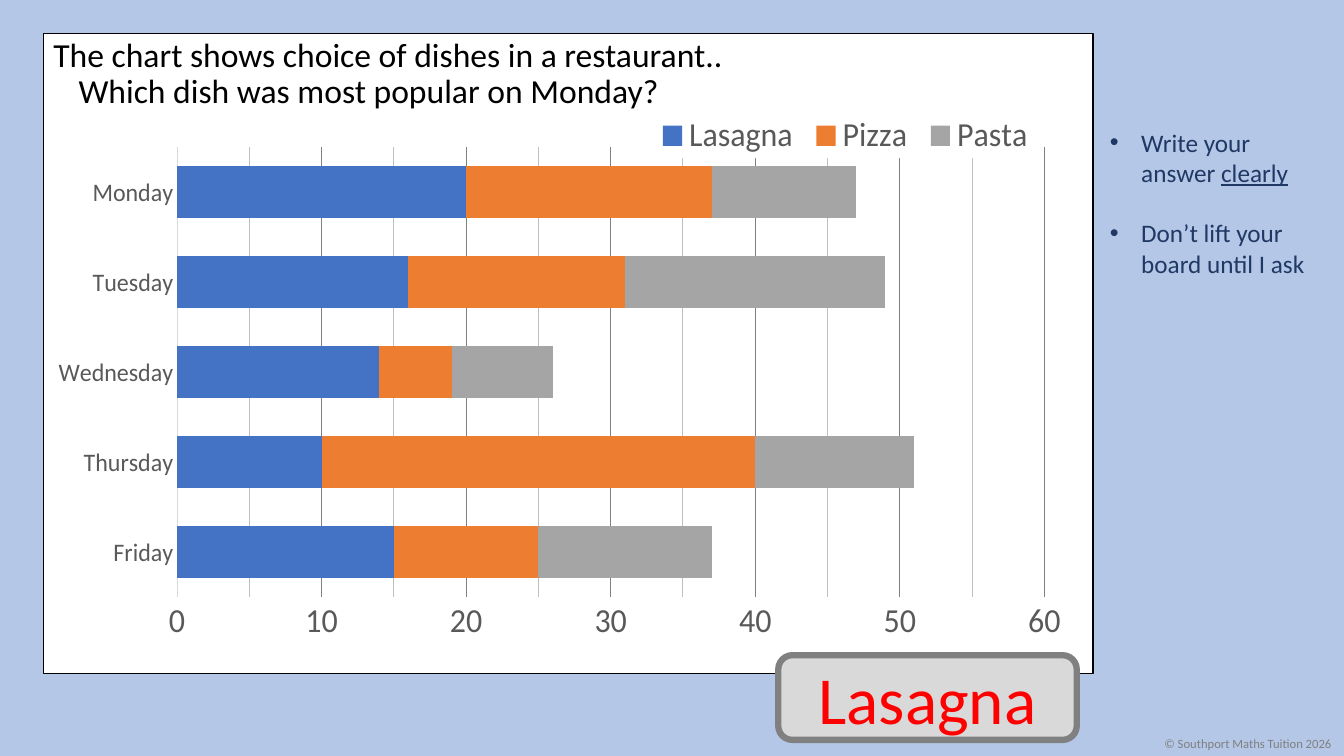
from lxml import etree
from pptx import Presentation, util as u
from pptx.chart.data import CategoryChartData
from pptx.dml.color import RGBColor
from pptx.enum import chart as ch, shapes, text
from pptx.oxml import parse_xml
from pptx.oxml.ns import nsdecls, qn

FONT = "Calibri"
DAYS = ["Friday", "Thursday", "Wednesday", "Tuesday", "Monday"]
DISHES = [
    ("Lasagna", "4472C4", (15, 10, 14, 16, 20)),
    ("Pizza", "ED7D31", (10, 30, 5, 15, 17)),
    ("Pasta", "A5A5A5", (12, 11, 7, 18, 10)),
]


def tint(hue):
    return RGBColor.from_string(hue)


def part(box, left, top, width, height):
    x, y, w, h = box
    return (int(x + w * left / 100), int(y + h * top / 100),
            int(w * width / 100), int(h * height / 100))


def style(font, size, hue):
    font.name = FONT
    font.size = u.Pt(size)
    font.color.rgb = tint(hue)


def rule(line, hue, width):
    line.color.rgb = tint(hue)
    line.width = u.Pt(width)


def write(para, words, size, hue, under=None):
    run = para.add_run()
    run.text = words
    style(run.font, size, hue)
    run.font.underline = under


def hang(para, inches, mark=None):
    props = para._p.get_or_add_pPr()
    props.set("marL", str(u.Inches(inches)))
    props.set("indent", str(-u.Inches(inches)))
    if mark:
        face = etree.SubElement(props, qn("a:buFont"))
        face.set("typeface", "Arial")
        etree.SubElement(props, qn("a:buChar")).set("char", mark)


def panel(slide, box, kind, fill, edge, width):
    shape = slide.shapes.add_shape(kind, *box)
    shape.shadow.inherit = False
    shape.fill.solid()
    shape.fill.fore_color.rgb = tint(fill)
    rule(shape.line, edge, width)
    return shape


def label(slide, box, wrap=True):
    frame = slide.shapes.add_textbox(*box).text_frame
    frame.word_wrap = wrap
    return frame


def layout(left, top, width, height, inner=False):
    target = '<c:layoutTarget val="inner"/>' if inner else ""
    sides = zip("xywh", (left, top, width, height))
    sizes = "".join(f'<c:{key} val="{val / 100:.3f}"/>' for key, val in sides)
    return parse_xml(
        f'<c:layout {nsdecls("c")}><c:manualLayout>{target}'
        '<c:xMode val="edge"/><c:yMode val="edge"/>'
        f'{sizes}</c:manualLayout></c:layout>')


def legend(chart):
    chart.has_legend = True
    key = chart.legend
    key.position = ch.XL_LEGEND_POSITION.BOTTOM
    key.include_in_layout = True
    style(key.font, 24, "595959")
    root = key._element
    root.find(qn("c:legendPos")).addnext(layout(57, 0.8, 41, 7.8))
    root.find(qn("c:txPr")).addprevious(parse_xml(
        f'<c:spPr {nsdecls("c", "a")}><a:solidFill>'
        '<a:srgbClr val="FFFFFF"/></a:solidFill></c:spPr>'))


def axes(chart):
    days, scale = chart.category_axis, chart.value_axis
    for axis, size in ((days, 18), (scale, 24)):
        axis.major_tick_mark = axis.minor_tick_mark = ch.XL_TICK_MARK.NONE
        style(axis.tick_labels.font, size, "595959")
    rule(days.format.line, "D9D9D9", 0.75)
    scale.format.line.fill.background()
    scale.minimum_scale, scale.maximum_scale = 0, 60
    scale.major_unit, scale.minor_unit = 10, 5
    scale.has_major_gridlines = scale.has_minor_gridlines = True
    rule(scale.major_gridlines.format.line, "808080", 0.75)
    minor = scale._element.find(qn("c:minorGridlines"))
    minor.append(parse_xml(
        f'<c:spPr {nsdecls("c", "a")}><a:ln w="{u.Pt(0.75)}"><a:solidFill>'
        '<a:srgbClr val="BFBFBF"/></a:solidFill></a:ln></c:spPr>'))


def graph(slide, box):
    data = CategoryChartData()
    data.categories = DAYS
    for name, _, vals in DISHES:
        data.add_series(name, vals)
    chart = slide.shapes.add_chart(
        ch.XL_CHART_TYPE.BAR_STACKED, *box, data).chart
    chart.has_title = False
    style(chart.font, 10, "000000")
    plot = chart.plots[0]
    plot.gap_width, plot.overlap = 75, 100
    plot.vary_by_categories = False
    for bar, (_, hue, _) in zip(plot.series, DISHES):
        bar.format.fill.solid()
        bar.format.fill.fore_color.rgb = tint(hue)
    axes(chart)
    legend(chart)
    area = chart._chartSpace.chart.plotArea
    for old in area.findall(qn("c:layout")):
        area.remove(old)
    area.insert(0, layout(7.4, 6.7, 91, 78.6, True))


def card(slide, box):
    panel(slide, box, shapes.MSO_SHAPE.RECTANGLE, "FFFFFF", "000000", 1)
    para = label(slide, box).paragraphs[0]
    hang(para, 0.25)
    para.line_spacing = 0.9
    write(para, "The chart shows choice of dishes in a restaurant..", 24, "000000")
    para.add_line_break()
    write(para, "Which dish was most popular on Monday?", 24, "000000")
    graph(slide, part(box, 1.44, 11.81, 95.49, 89.45))


def hints(slide, box):
    frame = label(slide, box)
    first, last = frame.paragraphs[0], frame.add_paragraph()
    last.space_before = u.Pt(21.6)
    for para in (first, last):
        hang(para, 0.31, "•")
    write(first, "Write your answer ", 18, "203864")
    write(first, "clearly", 18, "203864", True)
    write(last, "Don’t lift your board until I ask", 18, "203864")


def answer(slide, box):
    shape = panel(slide, box, shapes.MSO_SHAPE.ROUNDED_RECTANGLE,
                  "D9D9D9", "808080", 4.5)
    frame = shape.text_frame
    frame.vertical_anchor = text.MSO_ANCHOR.MIDDLE
    para = frame.paragraphs[0]
    para.alignment = text.PP_ALIGN.CENTER
    write(para, "Lasagna", 48, "FF0000")


def footer(slide, box):
    para = label(slide, box, False).paragraphs[0]
    write(para, "© Southport Maths Tuition 2026", 9, "808080")


def main():
    deck = Presentation()
    deck.slide_width, deck.slide_height = u.Inches(13.33), u.Inches(7.5)
    slide = deck.slides.add_slide(deck.slide_layouts[6])
    back = slide.background.fill
    back.solid()
    back.fore_color.rgb = tint("B4C7E7")
    page = (0, 0, deck.slide_width, deck.slide_height)
    card(slide, part(page, 3.23, 4.4, 78.09, 84.67))
    hints(slide, part(page, 81.85, 16.13, 17.4, 21.6))
    footer(slide, part(page, 85.9, 96.67, 14.1, 3.33))
    answer(slide, part(page, 57.91, 86.67, 22.21, 11.2))
    deck.save("out.pptx")


if __name__ == "__main__":
    main()
